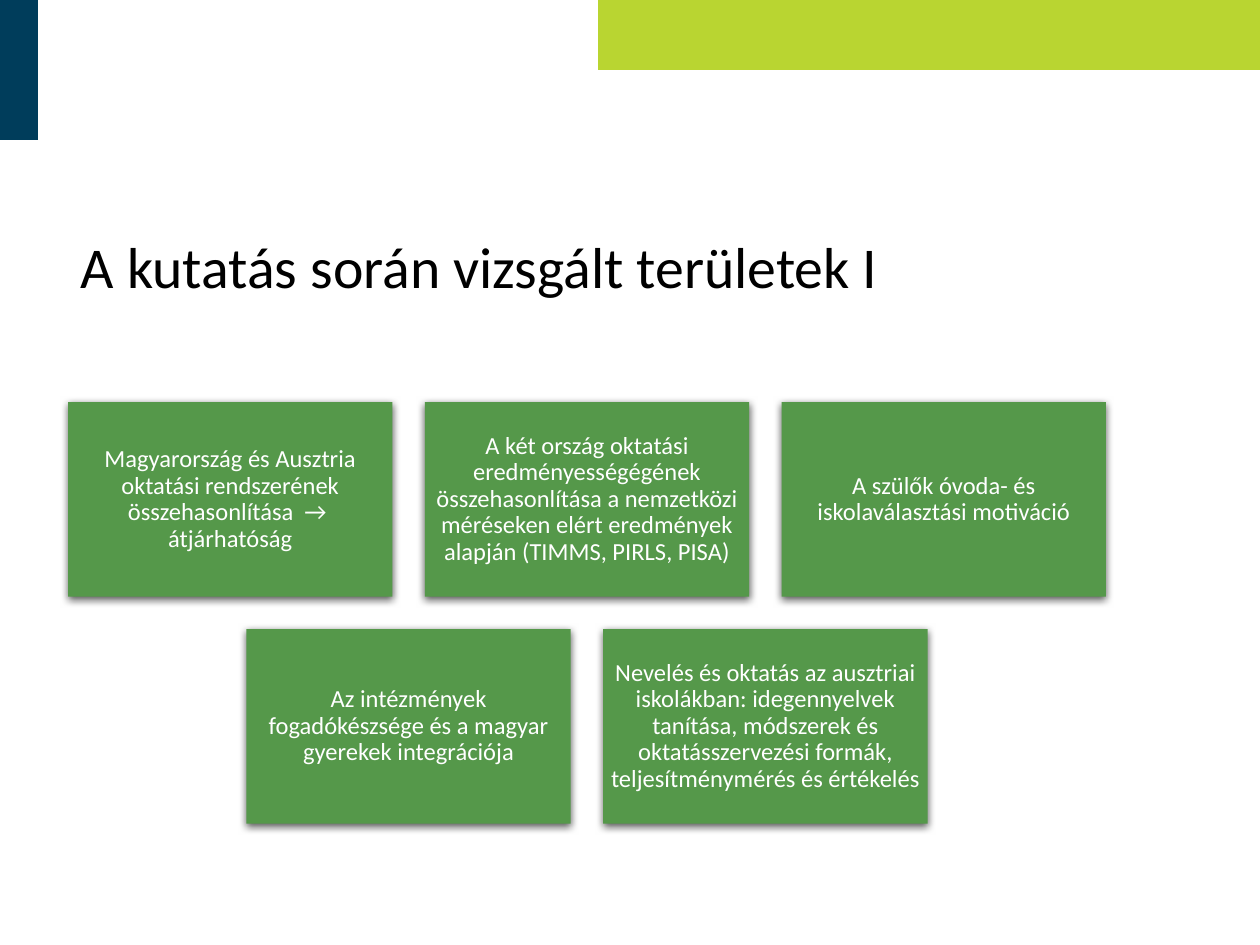
import dataclasses

import lxml.etree
import pptx
import pptx.dml.color
import pptx.enum.shapes
import pptx.enum.text
import pptx.oxml
import pptx.oxml.ns
import pptx.util

PX = 9144000 / 1260


@dataclasses.dataclass(frozen=True)
class Theme:
    """Colours, font and type sizes of the slide."""
    lime: str = "B9D531"
    navy: str = "003D5B"
    green: str = "55984A"
    black: str = "000000"
    white: str = "FFFFFF"
    font: str = "Calibri"
    title_size: int = 33
    card_size: int = 14


THEME = Theme()
TITLE = "A kutatás során vizsgált területek I"
CARD_ROWS = [
    [
        "Magyarország és Ausztria oktatási rendszerének összehasonlítása  →  átjárhatóság",
        "A két ország oktatási eredményességégének összehasonlítása a nemzetközi "
        "méréseken elért eredmények alapján (TIMMS, PIRLS, PISA)",
        "A szülők óvoda- és iskolaválasztási motiváció",
    ],
    [
        "Az intézmények fogadókészsége és a magyar gyerekek integrációja",
        "Nevelés és oktatás az ausztriai iskolákban: idegennyelvek tanítása, módszerek "
        "és oktatásszervezési formák, teljesítménymérés és értékelés",
    ],
]


def px(n):
    """Turn pixels into EMU."""
    return pptx.util.Emu(round(n * PX))


def rgb(color):
    """Turn a hex string into a colour."""
    return pptx.dml.color.RGBColor.from_string(color)


def add_rect(s, x, y, w, h, color):
    """Add a flat rectangle without an outline."""
    sp = s.shapes.add_shape(
        pptx.enum.shapes.MSO_SHAPE.RECTANGLE, px(x), px(y), px(w), px(h))
    sp.fill.solid()
    sp.fill.fore_color.rgb = rgb(color)
    sp.line.fill.background()
    sp.shadow.inherit = False
    return sp


def add_shadow(sp):
    """Give a shape a soft shadow below it."""
    effects = sp._element.spPr.find(pptx.oxml.ns.qn("a:effectLst"))
    shadow = lxml.etree.SubElement(
        effects, pptx.oxml.ns.qn("a:outerShdw"),
        blurRad="57150", dist="19050", dir="5400000", algn="ctr", rotWithShape="0")
    color = lxml.etree.SubElement(shadow, pptx.oxml.ns.qn("a:srgbClr"), val=THEME.black)
    lxml.etree.SubElement(color, pptx.oxml.ns.qn("a:alpha"), val="63000")


def write(tf, text, size, color, align):
    """Write one vertically centred paragraph."""
    tf.word_wrap = True
    tf.auto_size = pptx.enum.text.MSO_AUTO_SIZE.NONE
    tf.vertical_anchor = pptx.enum.text.MSO_ANCHOR.MIDDLE
    p = tf.paragraphs[0]
    p.alignment = align
    p.line_spacing = 0.9
    r = p.add_run()
    r.text = text
    r.font.name = THEME.font
    r.font.size = pptx.util.Pt(size)
    r.font.color.rgb = rgb(color)


def add_bands(s, x, y, w, h):
    """Place the two corner bands along the top of the box."""
    add_rect(s, x + w - 662, y, 662, h / 2, THEME.lime)
    add_rect(s, x - 1, y, 39, h, THEME.navy)


def add_title(s, x, y, w, h):
    """Place the title placeholder in the box."""
    sp = s.shapes.title
    sp.left, sp.top, sp.width, sp.height = px(x), px(y), px(w), px(h)
    write(sp.text_frame, TITLE, THEME.title_size, THEME.black,
          pptx.enum.text.PP_ALIGN.LEFT)


def add_card(s, x, y, w, h, text):
    """Add one shadowed card with centred text."""
    sp = add_rect(s, x, y, w, h, THEME.green)
    add_shadow(sp)
    tf = sp.text_frame
    tf.margin_left = tf.margin_right = tf.margin_top = tf.margin_bottom = px(7)
    write(tf, text, THEME.card_size, THEME.white, pptx.enum.text.PP_ALIGN.CENTER)


def add_cards(s, x, y, w, rows):
    """Lay out rows of cards, each row centred in the width."""
    columns = max(len(row) for row in rows)
    card_w = w / (columns + (columns - 1) / 10)
    card_h, gap = card_w * 0.6, card_w / 10
    for i, row in enumerate(rows):
        row_w = len(row) * (card_w + gap) - gap
        left = x + (w - row_w) / 2
        for j, text in enumerate(row):
            add_card(s, left + j * (card_w + gap), y + i * (card_h + gap),
                     card_w, card_h, text)


def main():
    """Build the slide and save it."""
    prs = pptx.Presentation()
    prs.slide_width, prs.slide_height = px(1260), px(945)
    s = prs.slides.add_slide(prs.slide_layouts[5])
    add_bands(s, 0, 0, 1260, 140)
    add_title(s, 68, 178, 1038, 183)
    add_cards(s, 68, 402, 1038, CARD_ROWS)
    prs.save("out.pptx")


if __name__ == "__main__":
    main()
